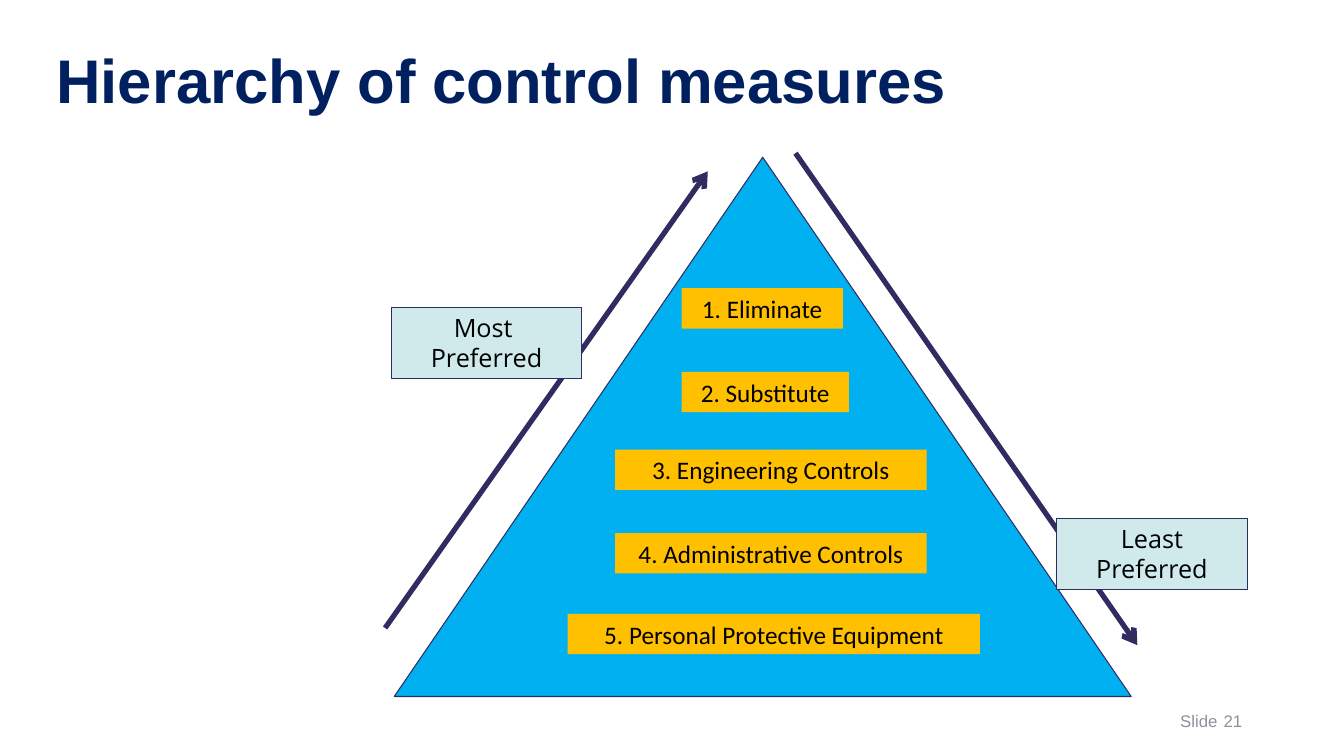
from pptx import Presentation
from pptx.dml.color import RGBColor
from pptx.enum.shapes import MSO_CONNECTOR as CONNECTOR, MSO_SHAPE as SHAPE
from pptx.enum.text import MSO_ANCHOR as ANCHOR, PP_ALIGN as ALIGN
from pptx.oxml.ns import qn
from pptx.util import Inches, Pt
from lxml import etree

COLORS = {
    "title": "002060",
    "footer": "8F8F9E",
    "outline": "2E2C61",
    "pyramid": "00B0F0",
    "level": "FFC000",
    "preference": "D0EAEC",
    "text": "000000",
}

# Label, left, top, width
LEVELS = [
    ("1. Eliminate", 6.76, 2.86, 1.6),
    ("2. Substitute", 6.76, 3.69, 1.66),
    ("3. Engineering Controls", 6.1, 4.46, 3.09),
    ("4. Administrative Controls", 6.1, 5.29, 3.09),
    ("5. Personal Protective Equipment", 5.63, 6.09, 4.09),
]


def color(name):
    return RGBColor.from_string(COLORS[name])


def write(frame, text, size, font, ink, align, bold=False):
    frame.word_wrap = True
    frame.text = text
    for paragraph in frame.paragraphs:
        paragraph.alignment = align
        for run in paragraph.runs:
            run.font.size = Pt(size)
            run.font.name = font
            run.font.bold = bold
            run.font.color.rgb = color(ink)


def add_text(slide, box, text, size, ink, align, anchor, bold=False):
    frame = slide.shapes.add_textbox(*map(Inches, box)).text_frame
    write(frame, text, size, "Arial", ink, align, bold)
    frame.vertical_anchor = anchor
    return frame


def add_figure(group, kind, box, fill, outlined):
    figure = group.shapes.add_shape(kind, *map(Inches, box))
    figure.shadow.inherit = False
    figure.fill.solid()
    figure.fill.fore_color.rgb = color(fill)
    if outlined:
        figure.line.color.rgb = color("outline")
        figure.line.width = Pt(0.75)
    else:
        figure.line.fill.background()
    return figure


def add_label(group, box, text, font, fill, outlined):
    label = add_figure(group, SHAPE.RECTANGLE, box, fill, outlined)
    write(label.text_frame, text, 18, font, "text", ALIGN.CENTER)
    label.text_frame.vertical_anchor = ANCHOR.TOP


def add_arrow(group, start, end):
    arrow = group.shapes.add_connector(
        CONNECTOR.STRAIGHT, *map(Inches, start + end))
    arrow.line.color.rgb = color("outline")
    arrow.line.width = Pt(3.75)
    etree.SubElement(arrow.line._get_or_add_ln(), qn("a:tailEnd"), type="arrow")
    etree.SubElement(arrow._element.spPr, qn("a:effectLst"))


def main():
    deck = Presentation()
    deck.slide_width, deck.slide_height = Inches(13.33), Inches(7.5)
    slide = deck.slides.add_slide(deck.slide_layouts[6])

    # Title and slide number
    title = add_text(slide, (0.46, 0.51, 12.82, 0.69),
                     "Hierarchy of control measures", 44, "title",
                     ALIGN.LEFT, ANCHOR.TOP, bold=True)
    title.paragraphs[0].line_spacing = 0.8
    add_text(slide, (11.37, 6.95, 1.04, 0.4), "Slide", 12, "footer",
             ALIGN.CENTER, ANCHOR.MIDDLE)
    add_text(slide, (9.42, 6.95, 3, 0.4), "21", 12, "footer",
             ALIGN.RIGHT, ANCHOR.MIDDLE)

    # Pyramid between the two arrows
    hierarchy = slide.shapes.add_group_shape()
    add_arrow(hierarchy, (7.89, 1.52), (11.28, 6.4))
    add_arrow(hierarchy, (3.82, 6.23), (7.02, 1.7))
    add_figure(hierarchy, SHAPE.ISOSCELES_TRIANGLE, (3.91, 1.56, 7.31, 5.35),
               "pyramid", outlined=True)

    # Control levels
    for text, left, top, width in LEVELS:
        add_label(hierarchy, (left, top, width, 0.4), text, "Calibri",
                  "level", outlined=False)

    # Ends of the preference scale
    for text, left, top in [("Most \nPreferred", 3.88, 3.05),
                            ("Least\nPreferred", 10.48, 5.14)]:
        add_label(hierarchy, (left, top, 1.89, 0.71), text, "Open Sans",
                  "preference", outlined=True)

    deck.save("out.pptx")


if __name__ == "__main__":
    main()
